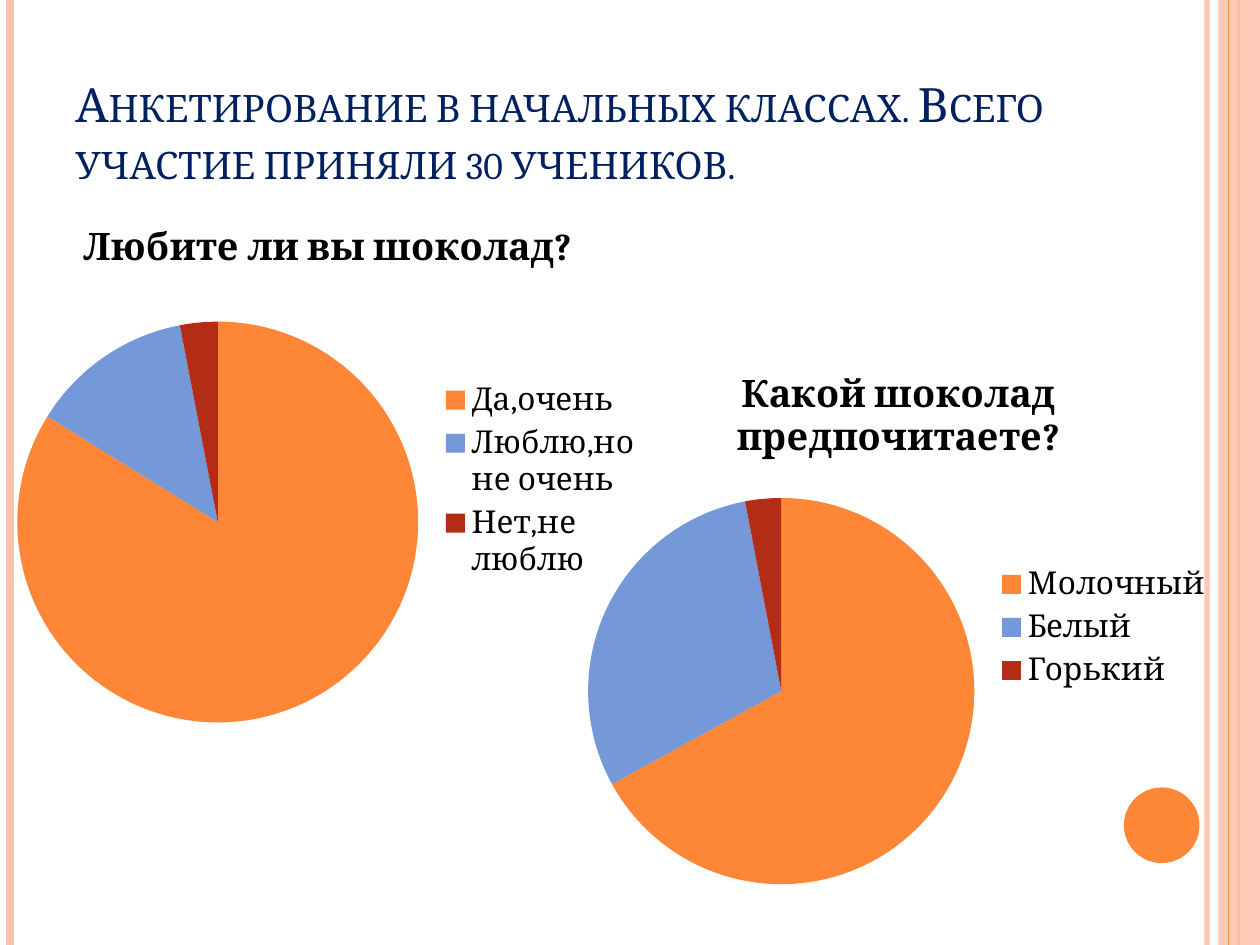
from lxml import etree
from pptx import Presentation
from pptx.chart.data import CategoryChartData
from pptx.dml.color import RGBColor
from pptx.enum.chart import XL_CHART_TYPE as ChartType, XL_LEGEND_POSITION as LegendPosition
from pptx.enum.shapes import MSO_CONNECTOR as Connector, MSO_SHAPE as Shape
from pptx.enum.text import MSO_ANCHOR as Anchor
from pptx.oxml.ns import qn
from pptx.util import Inches, Pt

FONT = "Cambria"
ORANGE, PEACH, NAVY, BLACK = "FE8637", "FEC3AE", "002060", "000000"
SLICE_COLOURS = [ORANGE, "7598D9", "B32C16"]
SLIDE_W, SLIDE_H = 10, 7.5


def rgb(value):
    return RGBColor.from_string(value)


def set_alpha(fill, percent):
    """Make the solid fill or line inside an XML element partly transparent."""
    colour = next(fill.iter(qn("a:srgbClr")))
    etree.SubElement(colour, qn("a:alpha")).set("val", str(percent * 1000))


def format_font(font, colour, **values):
    for name, value in {"name": FONT, **values}.items():
        setattr(font, name, value)
    font.color.rgb = rgb(colour)


def add_stripe(slide, x, colour, weight, alpha=None):
    """Draw a vertical line over the full slide height."""
    stripe = slide.shapes.add_connector(
        Connector.STRAIGHT, Inches(x), 0, Inches(x), Inches(SLIDE_H))
    stripe.line.color.rgb = rgb(colour)
    stripe.line.width = Pt(weight)
    properties = stripe.line._get_or_add_ln().getparent()
    if alpha:
        set_alpha(properties, alpha)
    etree.SubElement(properties, qn("a:effectLst"))


def add_filled(slide, kind, box, colour, alpha=None):
    shape = slide.shapes.add_shape(kind, *map(Inches, box))
    shape.shadow.inherit = False
    shape.fill.solid()
    shape.fill.fore_color.rgb = rgb(colour)
    if alpha:
        set_alpha(shape.element.spPr, alpha)
    shape.line.fill.background()


def add_decoration(slide):
    add_stripe(slide, 9.58, PEACH, 3, alpha=93)
    add_stripe(slide, 0.08, PEACH, 4.5)
    add_stripe(slide, 9.83, ORANGE, 1.5)
    add_filled(slide, Shape.RECTANGLE, (9.67, 0, 0.33, SLIDE_H), PEACH, alpha=87)
    add_stripe(slide, 9.75, ORANGE, 0.75)
    add_filled(slide, Shape.OVAL, (8.92, 6.25, 0.6, 0.6), ORANGE)


def add_heading(slide, box, text):
    frame = slide.shapes.add_textbox(*map(Inches, box)).text_frame
    frame.word_wrap = True
    frame.vertical_anchor = Anchor.BOTTOM
    run = frame.paragraphs[0].add_run()
    run.text = text
    format_font(run.font, NAVY, size=Pt(27))
    run.font._element.set("cap", "small")


def add_survey_pie(slide, box, question, answers):
    survey = CategoryChartData()
    survey.categories = list(answers)
    survey.add_series(question, list(answers.values()))
    chart = slide.shapes.add_chart(ChartType.PIE, *map(Inches, box), survey).chart
    format_font(chart.font, BLACK, size=Pt(18))

    chart.has_title = True
    title = chart.chart_title
    title.include_in_layout = False
    title.text_frame.text = question
    format_font(title.text_frame.paragraphs[0].runs[0].font, BLACK,
                size=Pt(21.6), bold=True)

    chart.has_legend = True
    chart.legend.position = LegendPosition.RIGHT
    chart.legend.include_in_layout = False

    plot = chart.plots[0]
    plot.vary_by_categories = True
    for index, colour in enumerate(SLICE_COLOURS):
        fill = plot.series[0].points[index].format.fill
        fill.solid()
        fill.fore_color.rgb = rgb(colour)


def main():
    deck = Presentation()
    deck.slide_width, deck.slide_height = Inches(SLIDE_W), Inches(SLIDE_H)
    slide = deck.slides.add_slide(deck.slide_layouts[6])
    add_decoration(slide)
    add_heading(slide, (0.5, 0.3, 8.17, 1.25),
                "Анкетирование в начальных классах. Всего участие приняли 30 учеников.")
    add_survey_pie(slide, (0, 1.56, 5.2, 4.5), "Любите ли вы шоколад?",
                   {"Да,очень": 83, "Люблю,но не очень": 13, "Нет,не люблю": 3})
    add_survey_pie(slide, (4.53, 2.73, 5.2, 4.5), "Какой шоколад предпочитаете?",
                   {"Молочный": 67, "Белый": 30, "Горький": 3})
    deck.save("out.pptx")


if __name__ == "__main__":
    main()
